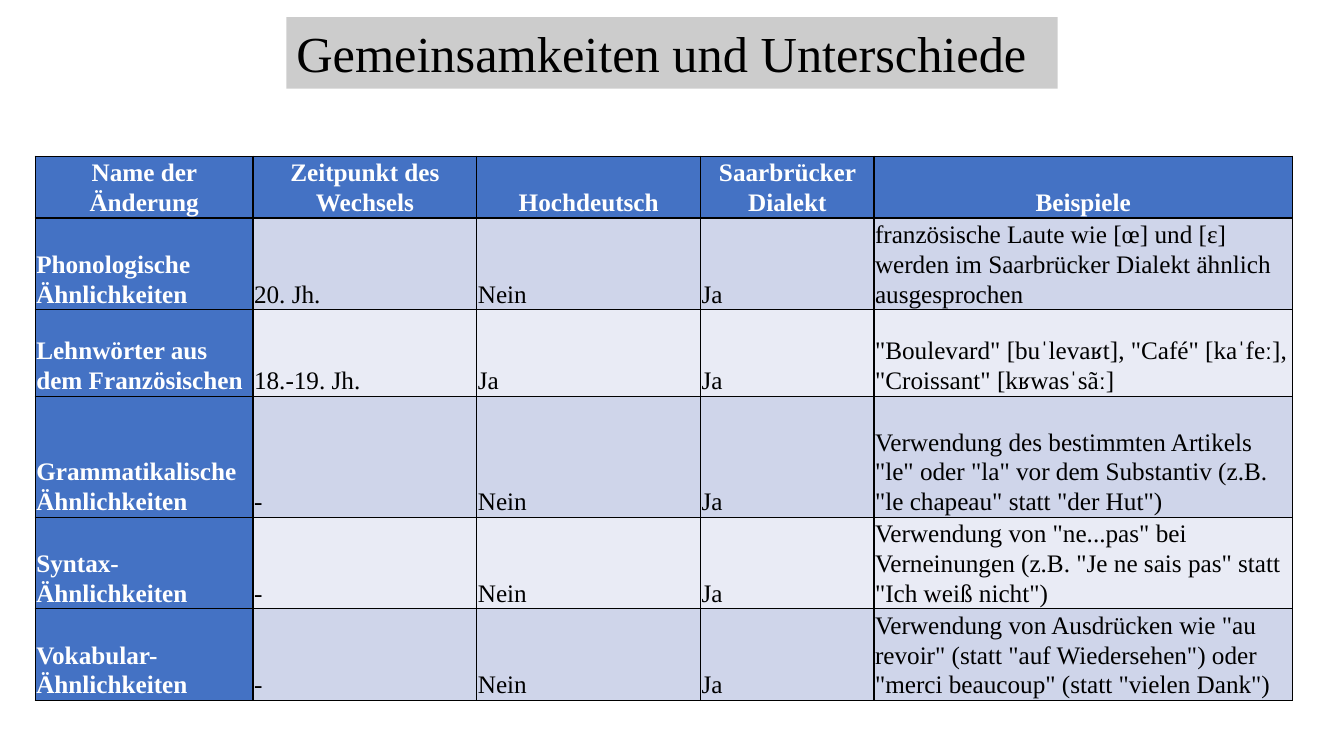
from dataclasses import dataclass

from lxml import etree
from pptx import Presentation
from pptx.dml.color import RGBColor as RGB
from pptx.enum.shapes import MSO_SHAPE as SHAPE
from pptx.enum.text import MSO_ANCHOR as ANCHOR, PP_ALIGN as ALIGN
from pptx.oxml.ns import qn
from pptx.util import Inches, Pt

TITLE = "Gemeinsamkeiten und Unterschiede"
TITLE_BOX = (2.84, 0.17, 7.65, 0.71)

HEADER = ["Name der Änderung", "Zeitpunkt des Wechsels", "Hochdeutsch",
          "Saarbrücker Dialekt", "Beispiele"]
CHANGES = [
    ["Phonologische Ähnlichkeiten", "20. Jh.", "Nein", "Ja",
     "französische Laute wie [œ] und [ɛ] werden im Saarbrücker Dialekt ähnlich ausgesprochen"],
    ["Lehnwörter aus dem Französischen", "18.-19. Jh.", "Ja", "Ja",
     '"Boulevard" [buˈlevaʁt], "Café" [kaˈfeː], "Croissant" [kʁwasˈsãː]'],
    ["Grammatikalische Ähnlichkeiten", "-", "Nein", "Ja",
     'Verwendung des bestimmten Artikels "le" oder "la" vor dem Substantiv '
     '(z.B. "le chapeau" statt "der Hut")'],
    ["Syntax-Ähnlichkeiten", "-", "Nein", "Ja",
     'Verwendung von "ne...pas" bei Verneinungen '
     '(z.B. "Je ne sais pas" statt "Ich weiß nicht")'],
    ["Vokabular-Ähnlichkeiten", "-", "Nein", "Ja",
     'Verwendung von Ausdrücken wie "au revoir" (statt "auf Wiedersehen") '
     'oder "merci beaucoup" (statt "vielen Dank")'],
]
TABLE_AT = (0.35, 1.55)
COL_WIDTHS = [2.16, 2.22, 2.22, 1.72, 4.15]
ROW_HEIGHTS = [0.61, 0.65, 0.86, 1.2, 0.88, 0.83]


@dataclass(frozen=True)
class Theme:
    font: str = "Times New Roman"
    title_size: int = 36
    cell_size: int = 18
    line_spacing: float = 1.07
    inset: float = 0.01
    border_width: int = 1
    title_alpha: int = 20
    ink: str = "000000"
    light: str = "FFFFFF"
    head: str = "4472C4"
    bands: tuple = ("E9EBF5", "CFD5EA")


THEME = Theme()


def style_text(p, size, color, bold=False):
    for r in p.runs:
        r.font.name = THEME.font
        r.font.size = Pt(size)
        r.font.bold = bold
        r.font.color.rgb = RGB.from_string(color)


def add_title(slide):
    sp = slide.shapes.add_shape(SHAPE.RECTANGLE, *map(Inches, TITLE_BOX))
    sp.shadow.inherit = False
    sp.line.fill.background()
    sp.fill.solid()
    sp.fill.fore_color.rgb = RGB.from_string(THEME.ink)
    color = sp.fill._xPr.find(".//" + qn("a:srgbClr"))
    etree.SubElement(color, qn("a:alpha"), val=str(THEME.title_alpha * 1000))
    tf = sp.text_frame
    tf.word_wrap = True
    tf.vertical_anchor = ANCHOR.TOP
    tf.text = TITLE
    p = tf.paragraphs[0]
    p.alignment = ALIGN.LEFT
    style_text(p, THEME.title_size, THEME.ink)


def add_borders(cell):
    tc_pr = cell._tc.get_or_add_tcPr()
    for side in ("lnL", "lnR", "lnT", "lnB"):
        ln = etree.SubElement(tc_pr, qn(f"a:{side}"), w=str(Pt(THEME.border_width)))
        fill = etree.SubElement(ln, qn("a:solidFill"))
        etree.SubElement(fill, qn("a:srgbClr"), val=THEME.ink)


def fill_cell(cell, text, row, col):
    is_head = row == 0 or col == 0
    add_borders(cell)
    cell.fill.solid()
    cell.fill.fore_color.rgb = RGB.from_string(THEME.head if is_head else THEME.bands[row % 2])
    cell.margin_left = cell.margin_right = Inches(THEME.inset)
    cell.margin_top = cell.margin_bottom = Inches(THEME.inset)
    cell.vertical_anchor = ANCHOR.BOTTOM
    cell.text = text
    p = cell.text_frame.paragraphs[0]
    p.alignment = ALIGN.CENTER if row == 0 else ALIGN.LEFT
    p.line_spacing = THEME.line_spacing
    style_text(p, THEME.cell_size, THEME.light if is_head else THEME.ink, is_head)


def add_comparison(slide):
    rows = [HEADER] + CHANGES
    size = (sum(COL_WIDTHS), sum(ROW_HEIGHTS))
    table = slide.shapes.add_table(len(rows), len(HEADER),
                                   *map(Inches, TABLE_AT + size)).table
    table.first_col = True
    for column, width in zip(table.columns, COL_WIDTHS):
        column.width = Inches(width)
    for row, height in zip(table.rows, ROW_HEIGHTS):
        row.height = Inches(height)
    for i, texts in enumerate(rows):
        for j, text in enumerate(texts):
            fill_cell(table.cell(i, j), text, i, j)


def main():
    prs = Presentation()
    prs.slide_width, prs.slide_height = Inches(13.33), Inches(7.5)
    slide = prs.slides.add_slide(prs.slide_layouts[6])
    add_title(slide)
    add_comparison(slide)
    prs.save("out.pptx")


if __name__ == "__main__":
    main()
